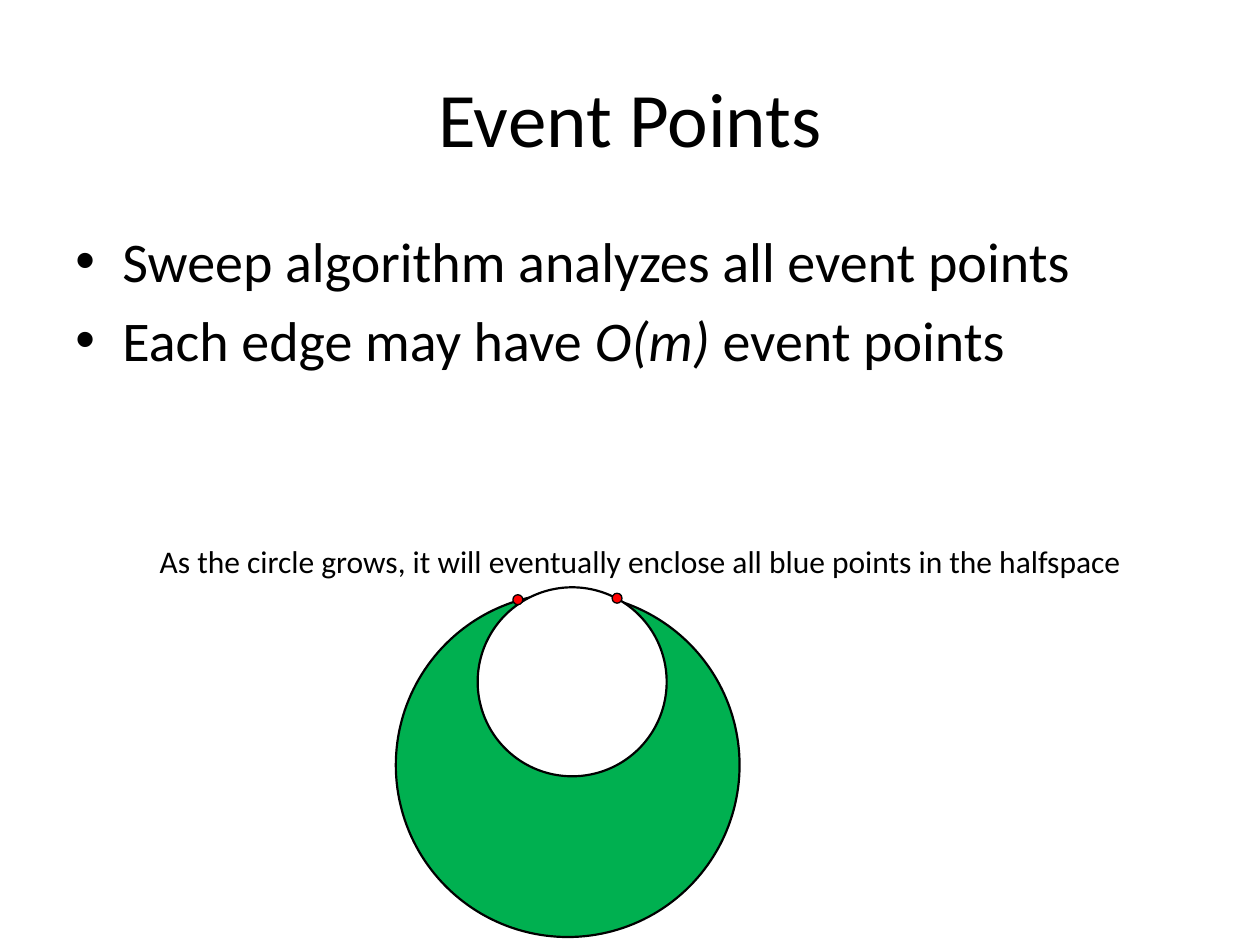
"""Build the slide on event points of a sweep algorithm."""
from dataclasses import dataclass

from lxml import etree
from pptx import Presentation
from pptx import util as u
from pptx.dml.color import RGBColor
from pptx.enum import shapes, text
from pptx.oxml.ns import qn

FONT = "Calibri"
BLACK, WHITE, GREEN, RED = "000000", "FFFFFF", "00B050", "FF0000"
DOT = 0.2


@dataclass
class Circle:
    left: float
    top: float
    diameter: float
    fill: str
    line_width: float


LARGE_CIRCLE = Circle(7.98, 11.96, 6.93, GREEN, 1.25)
FRONT_CIRCLES = [
    Circle(9.63, 11.84, 3.81, WHITE, 1.25),
    Circle(12.34, 11.96, DOT, RED, 0.75),
    Circle(10.34, 11.99, DOT, RED, 0.75),
]
BULLETS = [
    [("Sweep algorithm analyzes all event points", False)],
    [("Each edge may have ", False), ("O(m) ", True), ("event points", False)],
]


def color(value: str) -> RGBColor:
    return RGBColor.from_string(value)


def draw_circle(slide, circle: Circle) -> None:
    size = u.Cm(circle.diameter)
    shape = slide.shapes.add_shape(
        shapes.MSO_SHAPE.OVAL, u.Cm(circle.left), u.Cm(circle.top), size, size)
    shape.shadow.inherit = False
    shape.fill.solid()
    shape.fill.fore_color.rgb = color(circle.fill)
    shape.line.color.rgb = color(BLACK)
    shape.line.width = u.Pt(circle.line_width)


def add_bullet(paragraph) -> None:
    properties = paragraph._p.get_or_add_pPr()
    properties.set("marL", str(u.Cm(0.95)))
    properties.set("indent", str(-u.Cm(0.95)))
    etree.SubElement(properties, qn("a:buFont")).set("typeface", "Arial")
    etree.SubElement(properties, qn("a:buChar")).set("char", "•")


def add_text(slide, paragraphs, left: float, top: float, width: float, height: float, *,
             size: float, align=text.PP_ALIGN.LEFT, anchor=text.MSO_ANCHOR.TOP,
             wrap: bool = True, bullets: bool = False, space_before: float = 0) -> None:
    shape = slide.shapes.add_textbox(u.Cm(left), u.Cm(top), u.Cm(width), u.Cm(height))
    frame = shape.text_frame
    frame.word_wrap = wrap
    frame.vertical_anchor = anchor
    frame.auto_size = text.MSO_AUTO_SIZE.NONE if wrap else text.MSO_AUTO_SIZE.SHAPE_TO_FIT_TEXT
    for index, runs in enumerate(paragraphs):
        paragraph = frame.add_paragraph() if index else frame.paragraphs[0]
        if bullets:
            add_bullet(paragraph)
        paragraph.alignment = align
        if index:
            paragraph.space_before = u.Pt(space_before)
        for content, italic in runs:
            run = paragraph.add_run()
            run.text = content
            run.font.name = FONT
            run.font.size = u.Pt(size)
            run.font.italic = italic
            run.font.color.rgb = color(BLACK)


def main() -> None:
    presentation = Presentation()
    presentation.slide_width, presentation.slide_height = u.Cm(25.4), u.Cm(19.05)
    slide = presentation.slides.add_slide(presentation.slide_layouts[6])
    draw_circle(slide, LARGE_CIRCLE)
    add_text(slide, [[("Event Points", False)]], 1.27, 0.76, 22.86, 3.18, size=44,
             align=text.PP_ALIGN.CENTER, anchor=text.MSO_ANCHOR.MIDDLE)
    add_text(slide, BULLETS, 1.27, 4.45, 22.86, 12.57, size=32, bullets=True, space_before=6.4)
    for circle in FRONT_CIRCLES:
        draw_circle(slide, circle)
    caption = "As the circle grows, it will eventually enclose all blue points in the halfspace"
    add_text(slide, [[(caption, False)]], 2.97, 10.8, 20.14, 1.02, size=18, wrap=False)
    presentation.save("out.pptx")


if __name__ == "__main__":
    main()
